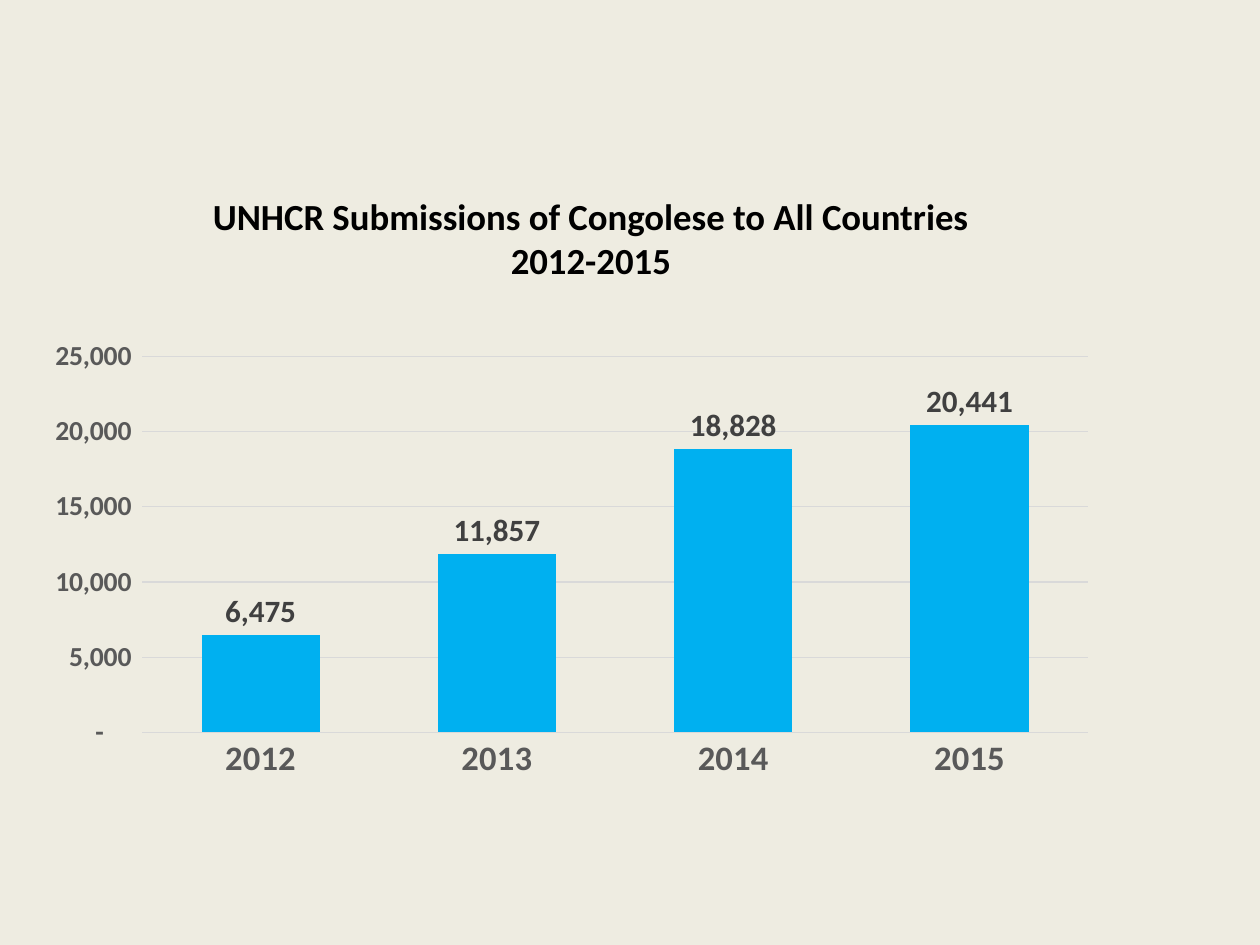
from dataclasses import dataclass

from lxml import etree
from pptx import Presentation
from pptx.chart.data import CategoryChartData
from pptx.dml.color import RGBColor
from pptx.enum.chart import XL_CHART_TYPE as ChartType
from pptx.enum.chart import XL_LABEL_POSITION as LabelPosition
from pptx.enum.chart import XL_TICK_MARK as TickMark
from pptx.enum.text import MSO_ANCHOR as Anchor
from pptx.enum.text import MSO_AUTO_SIZE as AutoSize
from pptx.enum.text import PP_ALIGN as Align
from pptx.oxml import parse_xml
from pptx.oxml.ns import nsdecls, qn
from pptx.util import Inches, Pt

BACKGROUND = RGBColor(0xEE, 0xEC, 0xE1)
BLACK = RGBColor(0x00, 0x00, 0x00)
AXIS_GRAY = RGBColor(0x59, 0x59, 0x59)
LABEL_GRAY = RGBColor(0x40, 0x40, 0x40)
LINE_GRAY = RGBColor(0xD9, 0xD9, 0xD9)
BAR_BLUE = RGBColor(0x00, 0xB0, 0xF0)
ACCOUNTING = r'_(* #,##0_);_(* \(#,##0\);_(* "-"??_);_('


@dataclass(frozen=True)
class TextStyle:
    size: float
    color: RGBColor
    bold: bool = True

    def apply(self, font) -> None:
        font.name = "Calibri"
        font.size = Pt(self.size)
        font.bold = self.bold
        font.color.rgb = self.color


@dataclass(frozen=True)
class YearCount:
    year: str
    submissions: int


COUNTS = [
    YearCount("2012", 6475),
    YearCount("2013", 11857),
    YearCount("2014", 18828),
    YearCount("2015", 20441),
]
TITLE_LINES = ["UNHCR Submissions of Congolese to All Countries", "2012-2015"]


def write_title(box, lines: list[str]) -> None:
    box.left, box.top = Inches(0.93), Inches(1.49)
    box.width, box.height = Inches(7.52), Inches(0.81)
    frame = box.text_frame
    frame.text = "\n".join(lines)
    frame.word_wrap = True
    frame.auto_size = AutoSize.SHAPE_TO_FIT_TEXT
    frame.vertical_anchor = Anchor.TOP
    for para in frame.paragraphs:
        para.alignment = Align.CENTER
        TextStyle(21, BLACK).apply(para.font)


def style_line(line, width: float) -> None:
    line.color.rgb = LINE_GRAY
    line.width = Pt(width)


def style_axis(axis, style: TextStyle) -> None:
    axis.major_tick_mark = axis.minor_tick_mark = TickMark.NONE
    style.apply(axis.tick_labels.font)


def set_plot_layout(chart, x: float, y: float, w: float, h: float) -> None:
    """Fix the inner plot area as fractions of the chart."""
    plot_area = chart.plots[0]._element.getparent()
    for old in plot_area.findall(qn("c:layout")):
        plot_area.remove(old)
    layout = parse_xml(f"<c:layout {nsdecls('c')}><c:manualLayout/></c:layout>")
    settings = {"layoutTarget": "inner", "xMode": "edge", "yMode": "edge",
                "x": x, "y": y, "w": w, "h": h}
    for name, value in settings.items():
        etree.SubElement(layout[0], qn(f"c:{name}")).set("val", str(value))
    plot_area.insert(0, layout)


def clear_chart_fill(chart) -> None:
    """Let the slide background show through the chart."""
    space = chart._chartSpace
    space.find(qn("c:chart")).addnext(parse_xml(
        f"<c:spPr {nsdecls('c', 'a')}><a:noFill/><a:ln><a:noFill/></a:ln></c:spPr>"))


def add_submissions_chart(page, counts: list[YearCount]) -> None:
    data = CategoryChartData(number_format="#,##0")
    data.categories = [count.year for count in counts]
    data.add_series("Series 1", [count.submissions for count in counts])
    chart = page.shapes.add_chart(
        ChartType.COLUMN_CLUSTERED, Inches(0.39), Inches(1.97),
        Inches(8.97), Inches(4.22), data).chart
    chart.has_title = chart.has_legend = False
    TextStyle(10, BLACK, bold=False).apply(chart.font)
    clear_chart_fill(chart)
    set_plot_layout(chart, 0.071, 0.207, 0.847, 0.721)

    # Axes
    years, values = chart.category_axis, chart.value_axis
    style_axis(years, TextStyle(20, AXIS_GRAY))
    style_line(years.format.line, 1)
    style_axis(values, TextStyle(16, AXIS_GRAY))
    values.format.line.fill.background()
    values.minimum_scale, values.maximum_scale = 0, 25000
    values.major_unit = 5000
    style_line(values.major_gridlines.format.line, 0.75)
    values.tick_labels.number_format = ACCOUNTING
    values.tick_labels.number_format_is_linked = False

    # Columns and their values
    plot = chart.plots[0]
    plot.vary_by_categories = False
    plot.gap_width, plot.overlap = 100, -24
    series = plot.series[0]
    series.format.fill.solid()
    series.format.fill.fore_color.rgb = BAR_BLUE
    labels = series.data_labels
    labels.show_value = True
    labels.position = LabelPosition.OUTSIDE_END
    labels.number_format = "#,##0"
    labels.number_format_is_linked = False
    TextStyle(18, LABEL_GRAY).apply(labels.font)


def main() -> None:
    deck = Presentation()
    deck.slide_width, deck.slide_height = Inches(10), Inches(7.5)
    page = deck.slides.add_slide(deck.slide_layouts.get_by_name("Title Only"))
    page.background.fill.solid()
    page.background.fill.fore_color.rgb = BACKGROUND
    write_title(page.shapes.title, TITLE_LINES)
    add_submissions_chart(page, COUNTS)
    deck.save("out.pptx")


if __name__ == "__main__":
    main()
